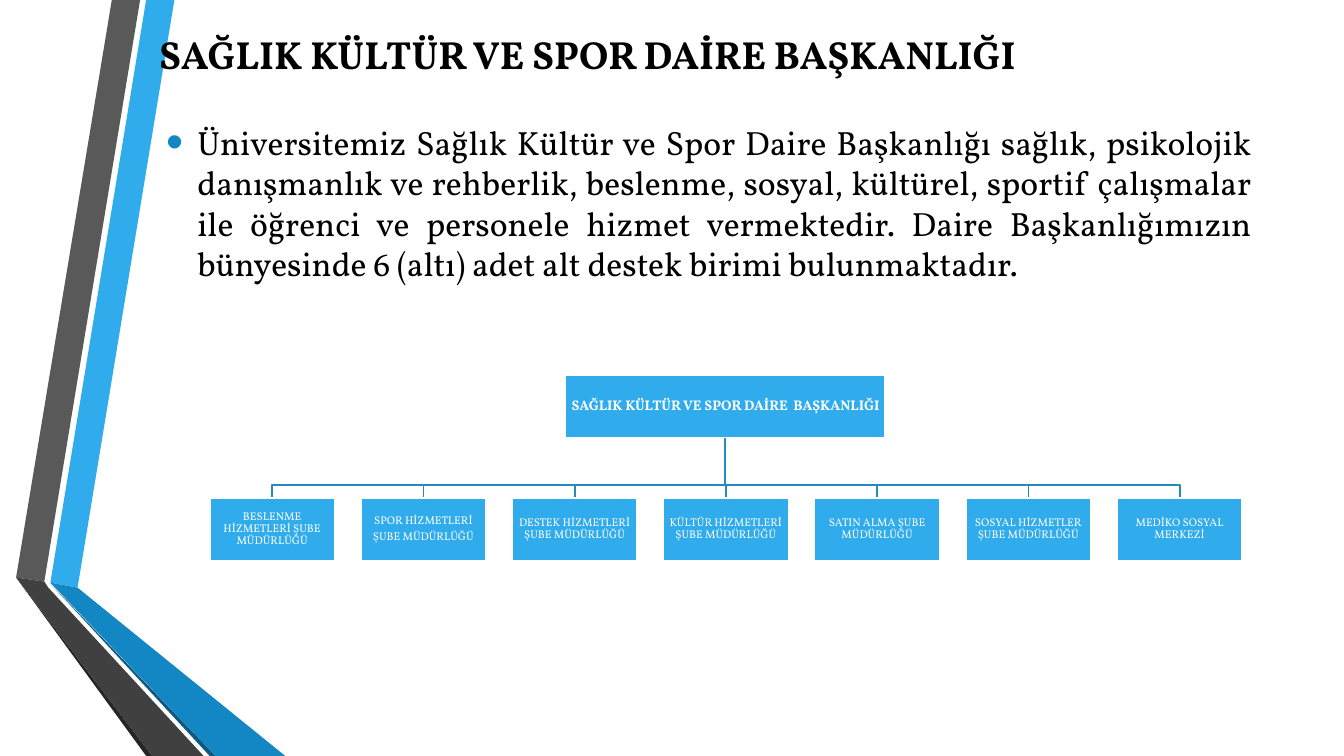
from lxml.etree import SubElement
from pptx import Presentation
from pptx.dml.color import RGBColor
from pptx.enum.shapes import MSO_SHAPE as Preset
from pptx.enum.text import MSO_ANCHOR as Anchor, PP_ALIGN as Align
from pptx.oxml.ns import qn
from pptx.util import Inches, Pt

COLORS = {
    "sky": "30ACEC",
    "blue": "1287C3",
    "navy": "0C5A82",
    "link": "268ABD",
    "gray": "595959",
    "charcoal": "404040",
    "ink": "262626",
    "black": "000000",
    "white": "FFFFFF",
}
FONT = "Vollkorn"

RIBBONS = [
    ("sky", [(0.5, 5.78), (0.77, 5.83), (1.73, 0), (1.45, 0)]),
    ("gray", [(1.39, 0), (1.11, 0), (0.16, 5.73), (0.44, 5.77)]),
    ("ink", [(0.16, 5.73), (1.45, 7.5), (1.51, 7.5)]),
    ("navy", [(0.5, 5.79), (2.08, 7.5), (2.14, 7.5)]),
    ("blue", [(0.5, 5.78), (2.14, 7.5), (2.83, 7.5), (0.77, 5.83)]),
    ("charcoal", [(2.02, 7.5), (0.48, 5.83), (0.44, 5.77), (0.16, 5.73), (1.51, 7.5)]),
]

TITLE = "SAĞLIK KÜLTÜR VE SPOR DAİRE BAŞKANLIĞI"
BODY = (
    "Üniversitemiz Sağlık Kültür ve Spor Daire Başkanlığı sağlık, psikolojik "
    "danışmanlık ve rehberlik, beslenme, sosyal, kültürel, sportif çalışmalar "
    "ile öğrenci ve personele hizmet vermektedir. Daire Başkanlığımızın "
    "bünyesinde 6 (altı) adet alt destek birimi bulunmaktadır."
)
ROOT = "SAĞLIK KÜLTÜR VE SPOR DAİRE  BAŞKANLIĞI"
UNITS = [
    "BESLENME HİZMETLERİ ŞUBE MÜDÜRLÜĞÜ",
    "SPOR HİZMETLERİ\nŞUBE MÜDÜRLÜĞÜ",
    "DESTEK HİZMETLERİ ŞUBE MÜDÜRLÜĞÜ",
    "KÜLTÜR HİZMETLERİ ŞUBE MÜDÜRLÜĞÜ",
    "SATIN ALMA ŞUBE MÜDÜRLÜĞÜ",
    "SOSYAL HİZMETLER ŞUBE MÜDÜRLÜĞÜ",
    "MEDİKO SOSYAL MERKEZİ",
]

ROOT_TOP, UNIT_TOP, BOX_HEIGHT = 3.72, 4.94, 0.62
ROOT_LEFT, ROOT_WIDTH = 5.61, 3.17
UNIT_LEFT, UNIT_WIDTH, UNIT_STEP = 2.08, 1.24, 1.5
TRUNK_X, BRANCH_Y = 7.19, 4.81


def rgb(name):
    """Return the named colour."""
    return RGBColor.from_string(COLORS[name])


def set_font(paragraph, size, color, bold=False):
    """Style a whole paragraph."""
    font = paragraph.font
    font.name, font.size, font.bold = FONT, Pt(size), bold
    font.color.rgb = rgb(color)


def add_path(page, points, closed):
    """Draw an outline through points given in inches."""
    start, *rest = [(Inches(x), Inches(y)) for x, y in points]
    builder = page.shapes.build_freeform(*start)
    builder.add_line_segments(rest, close=closed)
    shape = builder.convert_to_shape()
    shape.shadow.inherit = False
    return shape


def add_ribbon(page, color, points):
    """Add one filled piece of the side ribbon."""
    ribbon = add_path(page, points, True)
    ribbon.fill.solid()
    ribbon.fill.fore_color.rgb = rgb(color)
    ribbon.line.fill.background()


def add_branch(page, x):
    """Link the root box to the unit centred on x."""
    points = [(TRUNK_X, ROOT_TOP + BOX_HEIGHT), (TRUNK_X, BRANCH_Y), (x, BRANCH_Y), (x, UNIT_TOP)]
    branch = add_path(page, points, False)
    branch.fill.background()
    branch.line.color.rgb = rgb("link")
    branch.line.width = Pt(1.25)


def add_text(page, left, top, width, height, text, size, bold=False):
    """Add a wrapped one-paragraph text box and return its frame."""
    box = page.shapes.add_textbox(Inches(left), Inches(top), Inches(width), Inches(height))
    frame = box.text_frame
    frame.word_wrap = True
    frame.text = text
    set_font(frame.paragraphs[0], size, "black", bold)
    return frame


def add_bullet(paragraph):
    """Give a paragraph a hanging blue bullet."""
    props = paragraph._p.get_or_add_pPr()
    props.set("marL", str(Inches(0.31)))
    props.set("indent", str(-Inches(0.31)))
    color = SubElement(props, qn("a:buClr"))
    SubElement(color, qn("a:srgbClr"), val=COLORS["blue"])
    SubElement(props, qn("a:buSzPct"), val="145000")
    SubElement(props, qn("a:buFont"), typeface="Arial")
    SubElement(props, qn("a:buChar"), char="•")


def add_body(page):
    """Add the justified bulleted paragraph."""
    frame = add_text(page, 1.55, 1.16, 10.96, 1.7, "", 24)
    paragraph = frame.paragraphs[0]
    paragraph.text = BODY
    paragraph._p.remove(paragraph._p.get_or_add_pPr())
    add_bullet(paragraph)
    paragraph.alignment = Align.JUSTIFY
    set_font(paragraph, 24, "black")


def add_unit(page, left, top, width, text, size, bold=False):
    """Add one box of the organisation chart."""
    box = page.shapes.add_shape(
        Preset.RECTANGLE, Inches(left), Inches(top), Inches(width), Inches(BOX_HEIGHT)
    )
    box.shadow.inherit = False
    box.fill.solid()
    box.fill.fore_color.rgb = rgb("sky")
    box.line.color.rgb = rgb("white")
    box.line.width = Pt(1.25)
    frame = box.text_frame
    frame.word_wrap = True
    frame.vertical_anchor = Anchor.MIDDLE
    frame.margin_left = frame.margin_right = Inches(0.01)
    frame.margin_top = frame.margin_bottom = Inches(0.01)
    frame.text = text
    for paragraph in frame.paragraphs:
        paragraph.alignment = Align.CENTER
        paragraph.line_spacing = 0.9
        paragraph.space_after = Pt(0.35 * size)
        set_font(paragraph, size, "white", bold)


def main():
    """Build the slide and save it."""
    deck = Presentation()
    deck.slide_width, deck.slide_height = Inches(13.33), Inches(7.5)
    page = deck.slides.add_slide(deck.slide_layouts[6])

    for color, points in RIBBONS:
        add_ribbon(page, color, points)

    title = add_text(page, 1.48, 0, 10.96, 1.06, TITLE, 28, bold=True)
    title.vertical_anchor = Anchor.MIDDLE
    add_body(page)

    lefts = [UNIT_LEFT + UNIT_STEP * column for column in range(len(UNITS))]
    for left in lefts:
        add_branch(page, left + UNIT_WIDTH / 2)
    add_unit(page, ROOT_LEFT, ROOT_TOP, ROOT_WIDTH, ROOT, 10, bold=True)
    for left, name in zip(lefts, UNITS):
        add_unit(page, left, UNIT_TOP, UNIT_WIDTH, name, 8)

    deck.save("out.pptx")


if __name__ == "__main__":
    main()
